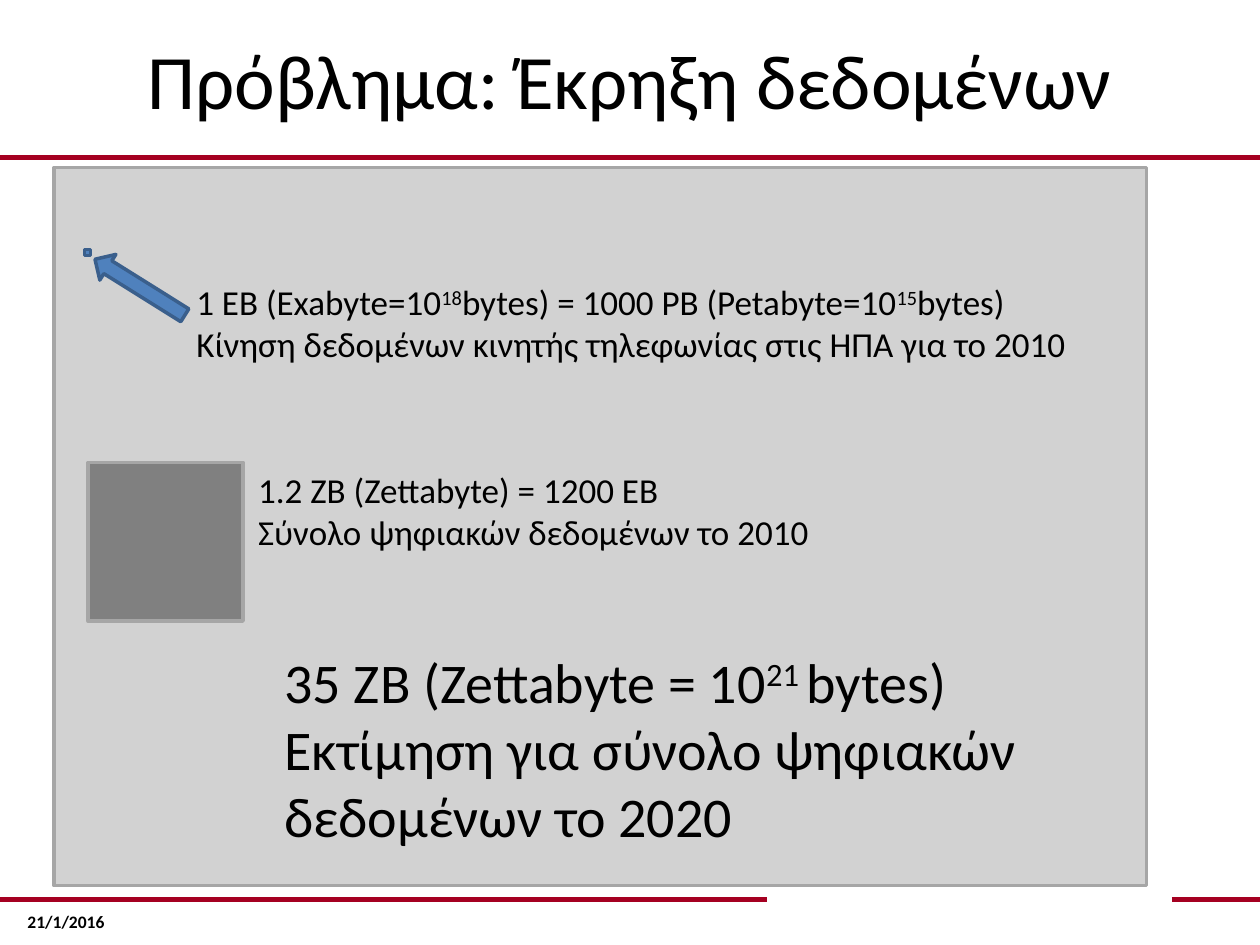
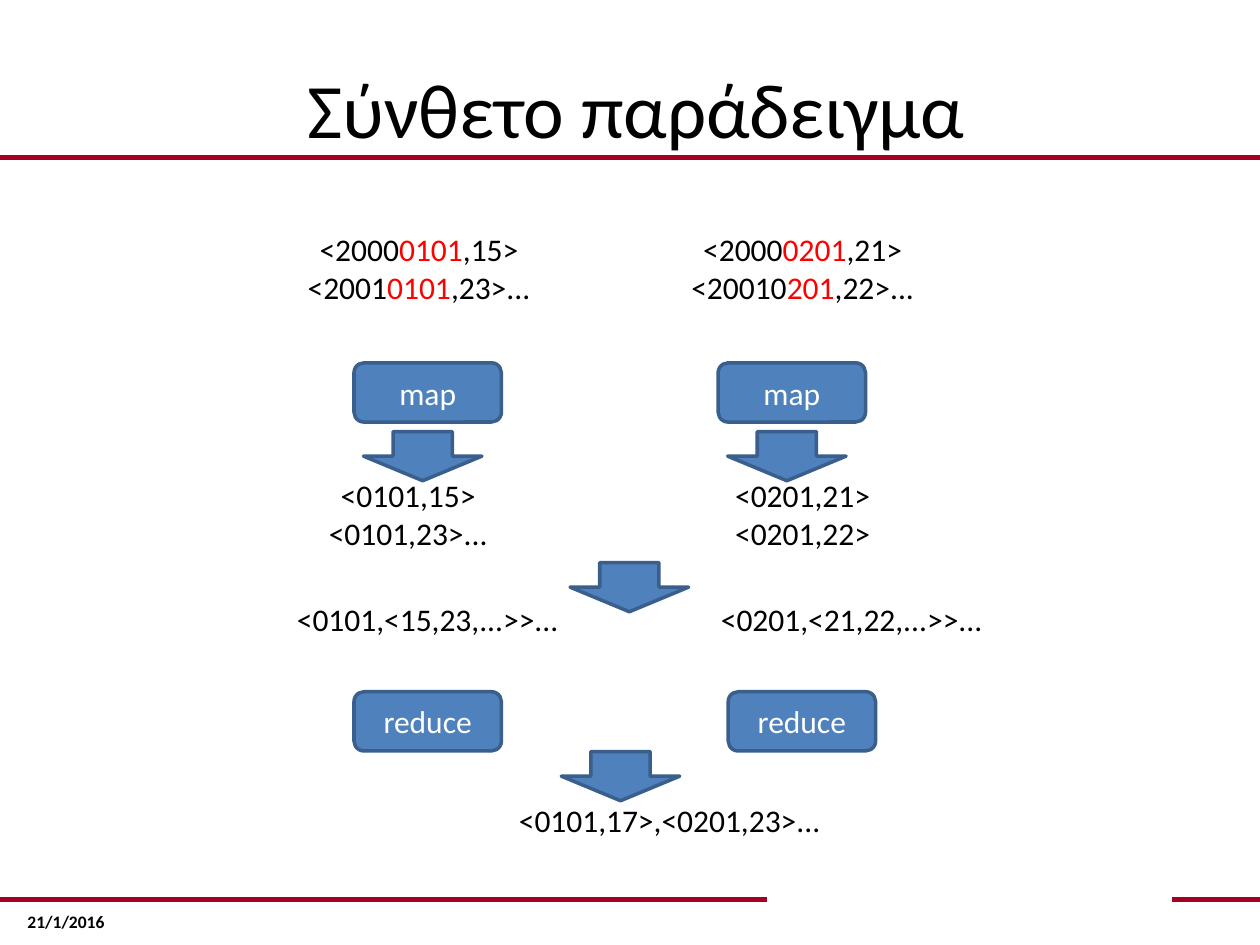
import dataclasses
import lxml.etree
import pptx
import pptx.dml.color
import pptx.enum.shapes
import pptx.enum.text
import pptx.oxml.ns
import pptx.util

FORM = pptx.enum.shapes.MSO_SHAPE
ALIGN = pptx.enum.text.PP_ALIGN
ANCHOR = pptx.enum.text.MSO_ANCHOR
QN = pptx.oxml.ns.qn


@dataclasses.dataclass(frozen=True)
class Theme:
    font: str = "Calibri"
    ink: str = "000000"
    paper: str = "FFFFFF"
    rule: str = "A50021"
    mark: str = "FF0000"
    blue: str = "4F81BD"
    edge: str = "3A5F8C"
    pale: str = "BFBFBF"
    gray: str = "808080"
    rim: str = "A6A6A6"
    title: int = 44
    big: int = 32
    body: int = 20
    code: int = 18
    date: int = 10


@dataclasses.dataclass(frozen=True)
class Box:
    """A region in grid units: the slide has 100 columns and 75 rows."""
    x: float
    y: float
    w: float
    h: float

    def at(self, x, y, w, h):
        return Box(self.x + x, self.y + y, w, h)

    def mid(self, shift, y, w, h):
        return self.at((self.w - w) / 2 + shift, y, w, h)

    def size(self):
        return [pptx.util.Inches(v / 10) for v in (self.x, self.y, self.w, self.h)]


THEME = Theme()
PAGE = Box(0, 0, 100, 75)
ROW = 7.1   # height of two lines of code
LINE = 4    # height of one line of code
NODE = (11.7, 4.7)
ARROW = (9.4, 3.9)


def color(code):
    return pptx.dml.color.RGBColor.from_string(code)


# Text: a paragraph is a list of runs, a run is a string or (string, style)
def write(frame, paras, size, ink=THEME.ink, align=ALIGN.LEFT, bold=False):
    for i, runs in enumerate(paras):
        para = frame.paragraphs[0] if i == 0 else frame.add_paragraph()
        para.alignment = align
        for part in runs:
            text, style = (part, None) if isinstance(part, str) else part
            run = para.add_run()
            run.text = text
            font = run.font
            font.name, font.size, font.bold = THEME.font, pptx.util.Pt(size), bold
            font.color.rgb = color(THEME.mark if style == "mark" else ink)
            if style == "sup":
                run._r.get_or_add_rPr().set("baseline", "30000")


def label(slide, box, paras, size, **look):
    frame = slide.shapes.add_textbox(*box.size()).text_frame
    frame.word_wrap = True
    write(frame, paras, size, **look)


def code(slide, box, paras):
    label(slide, box, paras, THEME.code, align=ALIGN.CENTER)


def block(slide, form, box, fill=THEME.blue, edge=THEME.edge):
    shape = slide.shapes.add_shape(form, *box.size())
    shape.shadow.inherit = False
    shape.fill.solid()
    shape.fill.fore_color.rgb = color(fill)
    shape.line.color.rgb = color(edge)
    shape.line.width = pptx.util.Pt(2)
    return shape


def node(slide, box, text):
    frame = block(slide, FORM.ROUNDED_RECTANGLE, box).text_frame
    frame.vertical_anchor = ANCHOR.MIDDLE
    write(frame, [[text]], THEME.code, THEME.paper, ALIGN.CENTER)


# Shared title, rules and date
def rule(slide, left, right, y):
    x, top, w, _ = PAGE.at(left, y, right - left, 0).size()
    line = slide.shapes.add_connector(
        pptx.enum.shapes.MSO_CONNECTOR.STRAIGHT, x, top, x + w, top)
    line.line.color.rgb = color(THEME.rule)
    line.line.width = pptx.util.Pt(3)
    props = line._element.find(QN("p:spPr"))
    lxml.etree.SubElement(props, QN("a:effectLst"))


def start(deck, title, box):
    slide = deck.slides.add_slide(deck.slide_layouts.get_by_name("Title Only"))
    label(slide, PAGE.at(1.2, 71.8, 11, 3.2), [["21/1/2016"]], THEME.date, bold=True)
    for left, right, y in ((93, 100, 71.4), (0, 60.9, 71.4), (0, 100, 12.5)):
        rule(slide, left, right, y)
    head = slide.shapes.title
    head.left, head.top, head.width, head.height = box.size()
    head.text_frame.vertical_anchor = ANCHOR.MIDDLE
    write(head.text_frame, [[title]], THEME.title, align=ALIGN.CENTER)
    return slide


# Slide 1: data volumes drawn to scale
def scale(slide, box):
    panel = block(slide, FORM.RECTANGLE, box, THEME.pale, THEME.rim)
    tint = panel._element.find(".//" + QN("a:srgbClr"))
    lxml.etree.SubElement(tint, QN("a:alpha")).set("val", "70000")
    block(slide, FORM.RECTANGLE, box.at(2.7, 23.4, 12.3, 12.6), THEME.gray, THEME.rim)
    block(slide, FORM.RECTANGLE, box.at(2.4, 6.5, 0.5, 0.5))
    block(slide, FORM.DOWN_ARROW, box.at(5.6, 5.3, 2.4, 8.4)).rotation = 122

    label(slide, box.at(10.3, 8.5, 77.2, 7.7), [
        ["1 EB (Exabyte=10", ("18", "sup"), "bytes) = 1000 PB (Petabyte=10",
         ("15", "sup"), "bytes)"],
        ["Κίνηση δεδομένων κινητής τηλεφωνίας στις ΗΠΑ για το 2010"],
    ], THEME.body)
    label(slide, box.at(15.2, 23.4, 64.3, 7.7), [
        ["1.2 ZB (Zettabyte) = 1200 EB"],
        ["Σύνολο ψηφιακών δεδομένων το 2010"],
    ], THEME.body)
    label(slide, box.at(17.3, 37.6, 69.3, 17.2), [
        ["35 ZB (Zettabyte = 10", ("21 ", "sup"), "bytes)"],
        ["Εκτίμηση για σύνολο ψηφιακών δεδομένων το 2020"],
    ], THEME.big)


# Slide 2: one lane from input to reduce; each text has (shift, width)
@dataclasses.dataclass(frozen=True)
class Lane:
    input: list
    pairs: list
    group: str
    spots: tuple
    shift: float


LEFT = Lane(
    [["<2000", ("0101", "mark"), ",15>"], ["<2001", ("0101", "mark"), ",23>..."]],
    [["<0101,15>"], ["<0101,23>..."]],
    "<0101,<15,23,...>>...",
    ((-0.7, 30.5), (-1.55, 43), (0, 27.3)), 0)
RIGHT = Lane(
    [["<2000", ("0201", "mark"), ",21>"], ["<20010", ("201", "mark"), ",22>..."]],
    [["<0201,21>"], ["<0201,22>"]],
    "<0201,<21,22,...>>...",
    ((0.85, 35.2), (0.85, 49.2), (4.75, 33.6)), 0.8)


def flow(slide, box, lane):
    rows = ((lane.input, 0, ROW), (lane.pairs, 19.5, ROW), ([[lane.group]], 29.3, LINE))
    for (paras, y, h), (shift, w) in zip(rows, lane.spots):
        code(slide, box.mid(shift, y, w, h), paras)
    node(slide, box.mid(0, 11, *NODE), "map")
    block(slide, FORM.DOWN_ARROW, box.mid(-0.4, 16.45, *ARROW))
    node(slide, box.mid(lane.shift, 37.1, *NODE), "reduce")


def steps(slide, box):
    for x, lane in ((28.1, LEFT), (57, RIGHT)):
        flow(slide, box.at(x, 0, NODE[0], box.h), lane)
    # Shuffle and output
    for shift, y in ((-0.05, 26.85), (-0.75, 41.85)):
        block(slide, FORM.DOWN_ARROW, box.mid(shift, y, *ARROW))
    code(slide, box.mid(3.15, 45.3, 71.9, LINE), [["<0101,17>,<0201,23>..."]])


def main():
    deck = pptx.Presentation()
    deck.slide_width, deck.slide_height = PAGE.size()[2:]
    slide = start(deck, "Πρόβλημα: Έκρηξη δεδομένων", PAGE.at(5, 0, 90, 12.5))
    scale(slide, PAGE.at(4.3, 13.3, 86.7, 57))
    slide = start(deck, "Σύνθετο παράδειγμα", PAGE.at(5.5, 2.3, 90, 12.5))
    steps(slide, PAGE.at(0, 17.8, 100, 50))
    deck.save("out.pptx")


if __name__ == "__main__":
    main()
